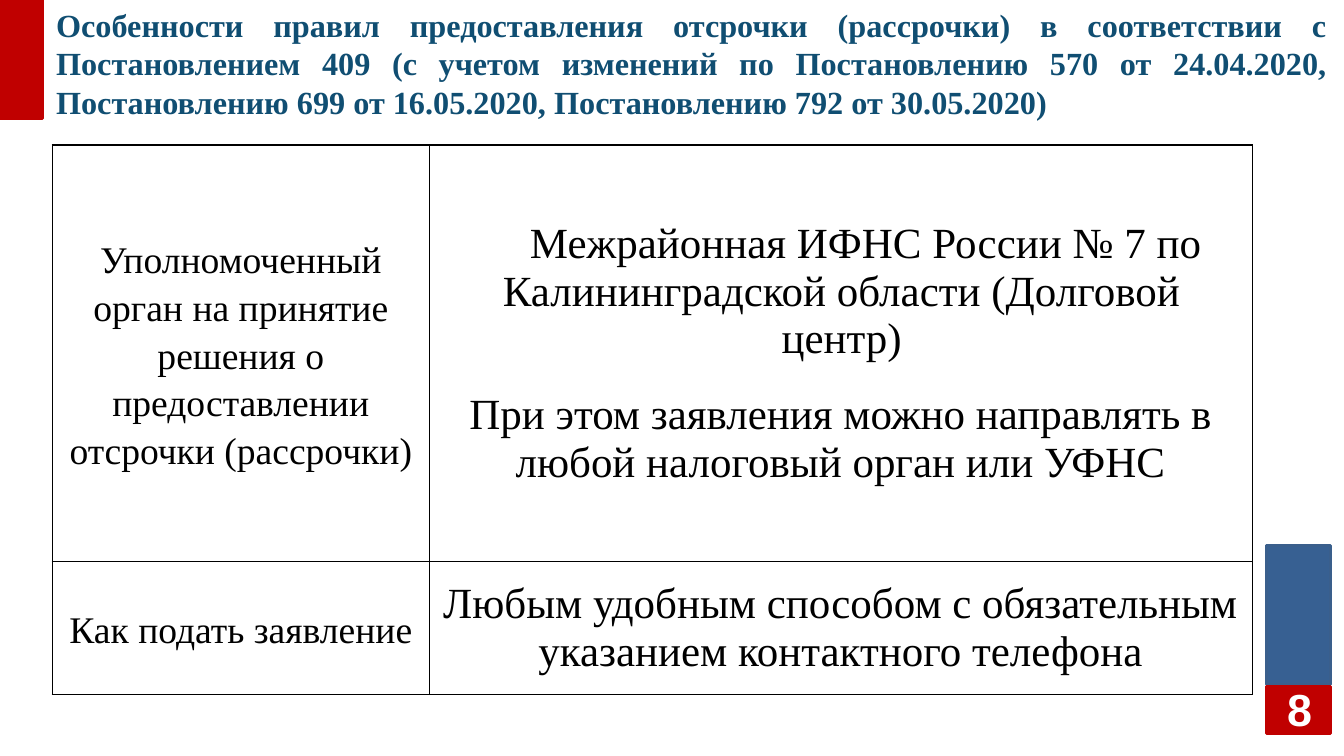
from lxml.etree import SubElement
from pptx import Presentation
from pptx.dml.color import RGBColor
from pptx.enum.shapes import MSO_SHAPE
from pptx.enum.text import MSO_ANCHOR, MSO_AUTO_SIZE, PP_ALIGN
from pptx.oxml.ns import qn
from pptx.util import Inches, Pt

RED = RGBColor(0xC0, 0x00, 0x00)
BLUE = RGBColor(0x37, 0x60, 0x92)
EDGE = RGBColor(0x3A, 0x5F, 0x8C)
NAVY = RGBColor(0x10, 0x4E, 0x72)
BLACK = RGBColor(0, 0, 0)
WHITE = RGBColor(255, 255, 255)
SERIF = "Times New Roman"

# Content
TITLE = ("Особенности правил предоставления отсрочки (рассрочки) в соответствии с "
         "Постановлением 409 (с учетом изменений по Постановлению 570 от 24.04.2020, "
         "Постановлению 699 от 16.05.2020, Постановлению 792 от 30.05.2020)")
ROWS = [
    (["Уполномоченный орган на принятие решения о предоставлении отсрочки (рассрочки)"],
     ["Межрайонная ИФНС России № 7 по Калининградской области (Долговой центр)",
      "При этом заявления можно направлять в любой налоговый орган или УФНС"]),
    (["Как подать заявление"],
     ["Любым удобным способом с обязательным указанием контактного телефона"]),
]
PAGE = "8"

# Grid, in inches
SIZE = (13.9, 7.82)
LEFT, TOP = 0.54, 1.5
COLS = (3.9, 8.51)
HEIGHTS = (4.31, 1.37)
STYLES = ((28, 1.15), (32, 1.0))  # text size and line spacing by column
BARS = [
    (13.1, 5.64, 0.66, 1.44, BLUE, EDGE),
    (13.1, 7.1, 0.66, 0.49, RED, RED),
    (0, 0, 0.44, 1.23, RED, RED),
]


def style(par, size, name, color, bold=False, align=PP_ALIGN.CENTER):
    par.alignment = align
    for run in par.runs:
        font = run.font
        font.size, font.name, font.bold = Pt(size), name, bold
        font.color.rgb = color


def inset(frame):
    frame.margin_left = frame.margin_right = 0
    frame.margin_top = frame.margin_bottom = Inches(0.05)
    frame.vertical_anchor = MSO_ANCHOR.MIDDLE
    frame.auto_size = MSO_AUTO_SIZE.NONE
    frame.word_wrap = True


def border(cell):
    props = cell._tc.get_or_add_tcPr()
    for spot, side in enumerate(("a:lnL", "a:lnR", "a:lnT", "a:lnB")):
        line = SubElement(props, qn(side), w=str(Pt(1)))
        props.remove(line)
        props.insert(spot, line)
        fill = SubElement(line, qn("a:solidFill"))
        SubElement(fill, qn("a:srgbClr"), val=str(BLACK))


def main():
    deck = Presentation()
    deck.slide_width, deck.slide_height = map(Inches, SIZE)
    slide = deck.slides.add_slide(deck.slide_layouts[5])
    shapes = slide.shapes

    # Colour bars
    for *box, fill, edge in BARS:
        bar = shapes.add_shape(MSO_SHAPE.RECTANGLE, *map(Inches, box))
        bar.shadow.inherit = False
        bar.fill.solid()
        bar.fill.fore_color.rgb = fill
        bar.line.color.rgb = edge
        bar.line.width = Pt(2)

    # Page number
    page = shapes.add_textbox(*map(Inches, (13.08, 7.12, 0.72, 0.42))).text_frame
    inset(page)
    page.text = PAGE
    style(page.paragraphs[0], 33.4, "Arial", WHITE, True)

    # Title
    title = shapes.title
    title.left, title.top, title.width, title.height = map(
        Inches, (0.58, 0.13, 13.14, 1.04))
    inset(title.text_frame)
    title.text_frame.text = TITLE
    style(title.text_frame.paragraphs[0], 24, SERIF, NAVY, True, PP_ALIGN.JUSTIFY)

    # Table
    table = shapes.add_table(len(ROWS), len(COLS), *map(
        Inches, (LEFT, TOP, sum(COLS), sum(HEIGHTS)))).table
    table.first_row = table.horz_banding = False
    for col, width in zip(table.columns, COLS):
        col.width = Inches(width)
    for r, (row, height) in enumerate(zip(ROWS, HEIGHTS)):
        table.rows[r].height = Inches(height)
        for c, (lines, (size, space)) in enumerate(zip(row, STYLES)):
            cell = table.cell(r, c)
            cell.fill.background()
            cell.vertical_anchor = MSO_ANCHOR.MIDDLE
            cell.margin_left = cell.margin_right = Inches(0.07)
            cell.margin_top = cell.margin_bottom = 0
            border(cell)
            cell.text_frame.text = "\n".join(lines)
            for n, par in enumerate(cell.text_frame.paragraphs):
                style(par, size, SERIF, BLACK)
                par.line_spacing = space
                if n:
                    par.space_before = Pt(21)

    # First-line indent of the authority's name
    props = table.cell(0, 1).text_frame.paragraphs[0]._p.get_or_add_pPr()
    props.set("marL", str(Inches(0.02)))
    props.set("indent", str(Inches(0.5)))

    deck.save("out.pptx")


if __name__ == "__main__":
    main()
